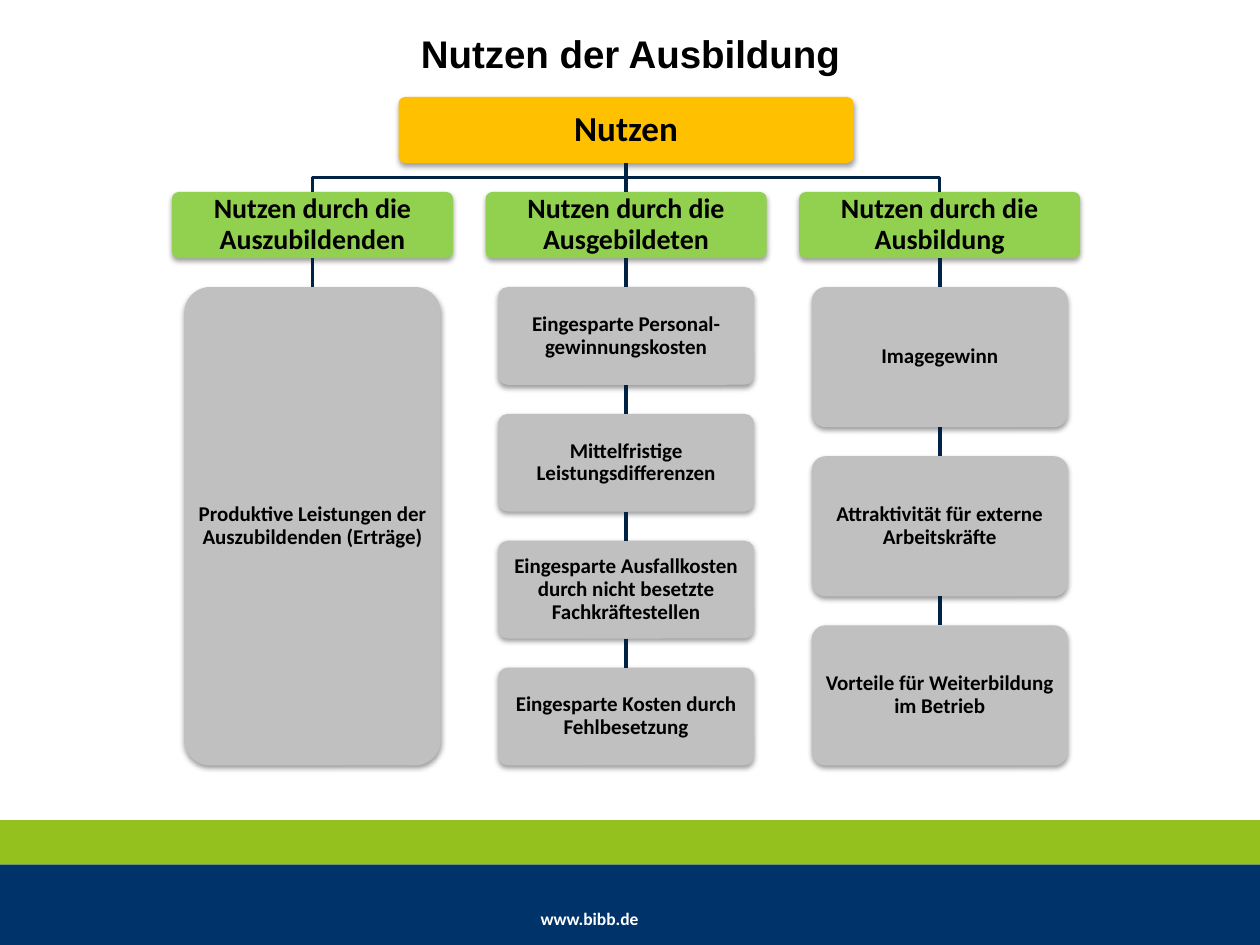
"""Builds the slide on the benefits of vocational training as a tree of boxes."""
from lxml.etree import SubElement
from pptx import Presentation
from pptx.dml.color import RGBColor
from pptx.enum.shapes import MSO_CONNECTOR, MSO_SHAPE
from pptx.enum.text import MSO_ANCHOR, PP_ALIGN
from pptx.oxml.ns import qn
from pptx.util import Pt

THEME = {
    "navy": "003369", "lime": "95C11F", "line": "002244",
    "root": "FFC000", "head": "92D050", "item": "C0C0C0",
    "dark": "000000", "light": "FFFFFF",
    "title_size": 22, "root_size": 20, "head_size": 16, "item_size": 12, "foot_size": 10,
}
COLUMNS = [
    ("Nutzen durch die Auszubildenden", ["Produktive Leistungen der Auszubildenden (Erträge)"]),
    ("Nutzen durch die Ausgebildeten", [
        "Eingesparte Personal-gewinnungskosten",
        "Mittelfristige Leistungsdifferenzen",
        "Eingesparte Ausfallkosten durch nicht besetzte Fachkräftestellen",
        "Eingesparte Kosten durch Fehlbesetzung",
    ]),
    ("Nutzen durch die Ausbildung", [
        "Imagegewinn",
        "Attraktivität für externe Arbeitskräfte",
        "Vorteile für Weiterbildung im Betrieb",
    ]),
]
CENTER, PITCH = 357.8, 179.2
ROOT_TOP, HEAD_TOP, BOX_H = 55.4, 109.7, 37.8
ITEM_TOP, ITEM_BOTTOM, GAP = 164, 437.4, 16.6


def write(sp, text, size, color="dark", font="Calibri", align=PP_ALIGN.CENTER,
          anchor=MSO_ANCHOR.MIDDLE, inset=(0, 0), spacing=0.9, wrap=True):
    tf = sp.text_frame
    tf.word_wrap, tf.vertical_anchor = wrap, anchor
    tf.margin_left = tf.margin_right = Pt(inset[0])
    tf.margin_top = tf.margin_bottom = Pt(inset[1])
    p = tf.paragraphs[0]
    p.alignment, p.line_spacing = align, spacing
    r = p.add_run()
    r.text = text
    r.font.name, r.font.size, r.font.bold = font, Pt(THEME[size]), True
    r.font.color.rgb = RGBColor.from_string(THEME[color])


def add_box(kind, text, center, top, width, height):
    sp = slide.shapes.add_shape(MSO_SHAPE.ROUNDED_RECTANGLE, Pt(center - width / 2),
                                Pt(top), Pt(width), Pt(height))
    sp.adjustments[0] = 0.1
    sp.fill.solid()
    sp.fill.fore_color.rgb = RGBColor.from_string(THEME[kind])
    sp.line.fill.background()
    sp.shadow.inherit = False
    effects = sp._element.spPr.find(qn("a:effectLst"))
    shadow = SubElement(effects, qn("a:outerShdw"), blurRad="40000", dist="20000",
                        dir="5400000", rotWithShape="0")
    color = SubElement(shadow, qn("a:srgbClr"), val=THEME["dark"])
    SubElement(color, qn("a:alpha"), val="38000")
    inset = 0.3 * THEME[f"{kind}_size"]
    write(sp, text, f"{kind}_size", inset=(inset, inset))
    return sp


prs = Presentation()
prs.slide_width, prs.slide_height = Pt(720), Pt(540)
slide = prs.slides.add_slide(prs.slide_layouts[5])

for color, top, height in [("navy", 493.9, 46.1), ("lime", 468.7, 25.2)]:
    band = slide.shapes.add_shape(MSO_SHAPE.RECTANGLE, 0, Pt(top), prs.slide_width, Pt(height))
    band.fill.solid()
    band.fill.fore_color.rgb = RGBColor.from_string(THEME[color])
    band.line.fill.background()
    band.shadow.inherit = False

footer = slide.shapes.add_textbox(Pt(308.9), Pt(519.1), Pt(73.4), Pt(12.2))
write(footer, "www.bibb.de", "foot_size", color="light", align=PP_ALIGN.LEFT,
      anchor=MSO_ANCHOR.TOP, spacing=1.0, wrap=False)

title = slide.shapes.title
title.left, title.top, title.width, title.height = Pt(73.4), Pt(16.6), Pt(573.8), Pt(31.7)
write(title, "Nutzen der Ausbildung", "title_size", font="Arial",
      anchor=MSO_ANCHOR.TOP, inset=(7.2, 3.6))

root = add_box("root", "Nutzen", CENTER, ROOT_TOP, 260, BOX_H)
root_bottom = ROOT_TOP + BOX_H
bend = (root_bottom + HEAD_TOP) / 2
lines = []

for i, (heading, items) in enumerate(COLUMNS):
    x = CENTER + (i - 1) * PITCH
    head = add_box("head", heading, x, HEAD_TOP, 160.6, BOX_H)
    chain = [head]
    height = (ITEM_BOTTOM - ITEM_TOP - GAP * (len(items) - 1)) / len(items)
    for j, item in enumerate(items):
        chain.append(add_box("item", item, x, ITEM_TOP + j * (height + GAP), 146.4, height))

    if x == CENTER:
        chain.insert(0, root)
    else:
        path = slide.shapes.build_freeform(Pt(CENTER), Pt(root_bottom))
        path.add_line_segments([(Pt(CENTER), Pt(bend)), (Pt(x), Pt(bend)), (Pt(x), Pt(HEAD_TOP))],
                               close=False)
        branch = path.convert_to_shape()
        branch.fill.background()
        lines.append(branch)
    for upper, lower in zip(chain, chain[1:]):
        link = slide.shapes.add_connector(MSO_CONNECTOR.STRAIGHT, 0, 0, 0, 0)
        link.begin_connect(upper, 2)
        link.end_connect(lower, 0)
        lines.append(link)

for line in lines:
    line.line.color.rgb = RGBColor.from_string(THEME["line"])
    line.line.width = Pt(2)
    SubElement(line._element.spPr, qn("a:effectLst"))

prs.save("out.pptx")
